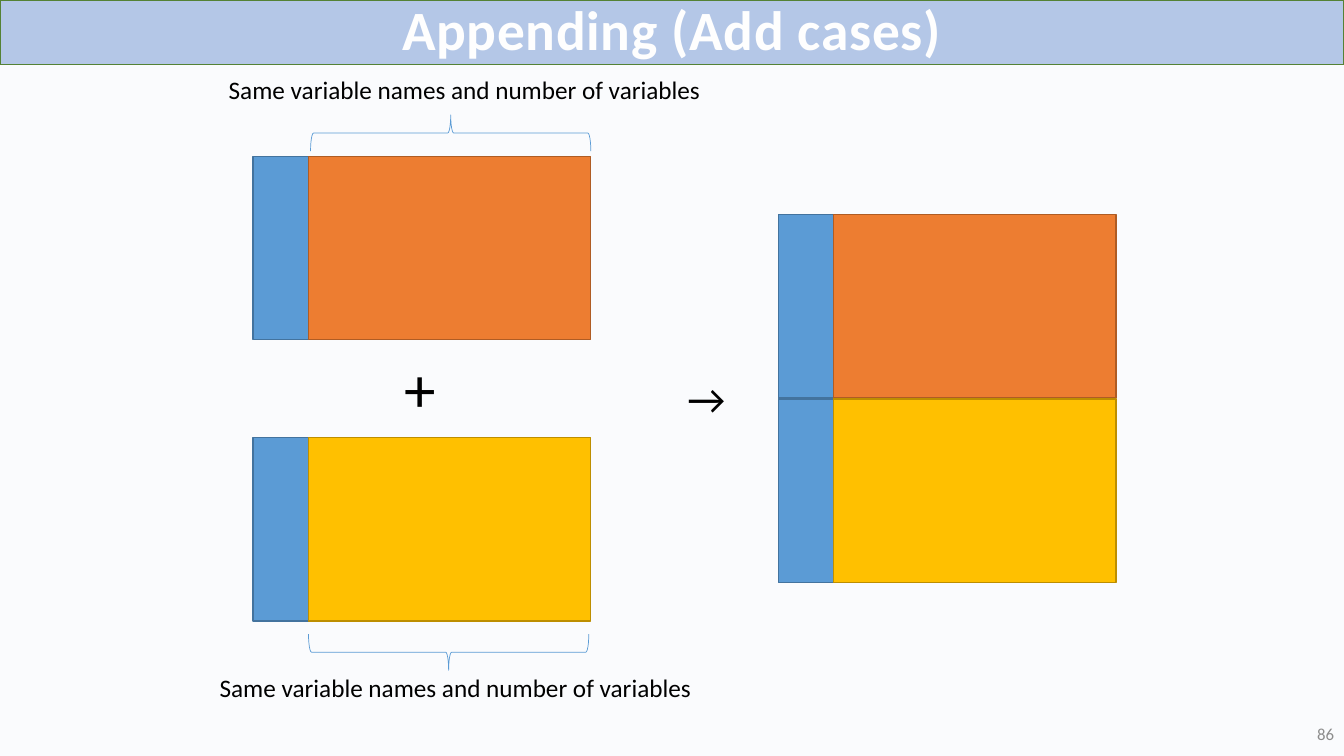
import dataclasses

import pptx
import pptx.dml.color
import pptx.enum.shapes
import pptx.enum.text
import pptx.util

EMU_PER_PX = 9144  # 100 px to the inch
SLIDE_WIDTH, SLIDE_HEIGHT = 1333, 750
BLOCK_WIDTH, BLOCK_HEIGHT, KEY_WIDTH = 280, 182, 55
BRACE_DEPTH, BRACE_LENGTH = 36, 278
LABEL = "Same variable names and number of variables"

SHAPES = pptx.enum.shapes.MSO_SHAPE
ALIGN = pptx.enum.text.PP_ALIGN
ANCHOR = pptx.enum.text.MSO_ANCHOR


@dataclasses.dataclass(frozen=True)
class Theme:
    font: str = "Calibri"
    background: str = "FAFBFD"
    banner: tuple = ("B4C7E7", "548235")
    key: tuple = ("5B9BD5", "43739E")
    first_cases: tuple = ("ED7D31", "AF5C24")
    second_cases: tuple = ("FFC000", "BD8E00")
    brace: str = "5B9BD5"
    title_text: str = "FEFEFE"
    text: str = "000000"
    number_text: str = "8C8C8C"
    title_size: float = 39.6
    plus_size: int = 45
    arrow_size: int = 30
    label_size: int = 18
    number_size: int = 12


THEME = Theme()


def px(length):
    return pptx.util.Emu(round(length * EMU_PER_PX))


def rgb(color):
    return pptx.dml.color.RGBColor.from_string(color)


def write_text(shape, text, size, color=THEME.text, bold=False, align=ALIGN.LEFT,
               anchor=ANCHOR.TOP, wrap=True, line_spacing=None, tracking=None):
    """Fill a shape with one formatted paragraph; tracking is in 1/100 pt."""
    frame = shape.text_frame
    frame.word_wrap = wrap
    frame.vertical_anchor = anchor
    paragraph = frame.paragraphs[0]
    paragraph.alignment = align
    paragraph.line_spacing = line_spacing
    run = paragraph.add_run()
    run.text = text
    run.font.name = THEME.font
    run.font.size = pptx.util.Pt(size)
    run.font.bold = bold
    run.font.color.rgb = rgb(color)
    if tracking is not None:
        run.font._element.set("spc", str(tracking))


def add_text(slide, box, text, size, **text_format):
    shape = slide.shapes.add_textbox(*map(px, box))
    write_text(shape, text, size, **text_format)


def add_rectangle(shapes, box, colors):
    fill, line = colors
    shape = shapes.add_shape(SHAPES.RECTANGLE, *map(px, box))
    shape.shadow.inherit = False
    shape.fill.solid()
    shape.fill.fore_color.rgb = rgb(fill)
    shape.line.color.rgb = rgb(line)
    shape.line.width = pptx.util.Pt(1)
    return shape


def add_banner(slide, box, title):
    shape = add_rectangle(slide.shapes, box, THEME.banner)
    write_text(shape, title, THEME.title_size, color=THEME.title_text, bold=True,
               align=ALIGN.CENTER, anchor=ANCHOR.MIDDLE, line_spacing=0.9, tracking=50)


def add_dataset(slide, left, top, *case_colors):
    """Stack one block per colour, each with the key column showing at its left."""
    shapes = slide.shapes.add_group_shape().shapes
    for row, colors in enumerate(case_colors):
        block_top = top + row * (BLOCK_HEIGHT + 1)
        for offset, block_colors in ((0, THEME.key), (KEY_WIDTH, colors)):
            add_rectangle(shapes, (left + offset, block_top, BLOCK_WIDTH, BLOCK_HEIGHT),
                          block_colors)


def add_brace(slide, center_x, center_y, rotation):
    shape = slide.shapes.add_shape(
        SHAPES.LEFT_BRACE, px(center_x - BRACE_DEPTH / 2), px(center_y - BRACE_LENGTH / 2),
        px(BRACE_DEPTH), px(BRACE_LENGTH))
    shape.rotation = rotation
    shape.shadow.inherit = False
    shape.fill.background()
    shape.line.color.rgb = rgb(THEME.brace)
    shape.line.width = pptx.util.Pt(0.5)


def add_inputs(slide, left, top):
    """Two datasets, one above the other, each with a brace and a label."""
    second_top = top + 279
    add_dataset(slide, left, top, THEME.first_cases)
    add_dataset(slide, left, second_top, THEME.second_cases)
    add_text(slide, (left + 140, top + 187, 73, 86), "+", THEME.plus_size)
    for center_x, center_y, rotation, label_left, label_top in (
            (left + 196, top - 23, 90, left - 34, top - 86),
            (left + 194, second_top + 213, 270, left - 43, second_top + 228)):
        add_brace(slide, center_x, center_y, rotation)
        add_text(slide, (label_left, label_top, 493, 40), LABEL, THEME.label_size, wrap=False)


def add_result(slide, left, top):
    add_text(slide, (left - 100, top + 152, 73, 61), "→", THEME.arrow_size)
    add_dataset(slide, left, top, THEME.first_cases, THEME.second_cases)


def main():
    presentation = pptx.Presentation()
    presentation.slide_width = px(SLIDE_WIDTH)
    presentation.slide_height = px(SLIDE_HEIGHT)
    slide = presentation.slides.add_slide(presentation.slide_layouts[6])
    slide.background.fill.solid()
    slide.background.fill.fore_color.rgb = rgb(THEME.background)

    add_banner(slide, (0, 0, SLIDE_WIDTH, 64), "Appending (Add cases)")
    add_inputs(slide, 251, 155)
    add_result(slide, 772, 213)
    add_text(slide, (1217, 707, 116, 43), "86", THEME.number_size, color=THEME.number_text,
             align=ALIGN.RIGHT, anchor=ANCHOR.MIDDLE)
    presentation.save("out.pptx")


if __name__ == "__main__":
    main()
